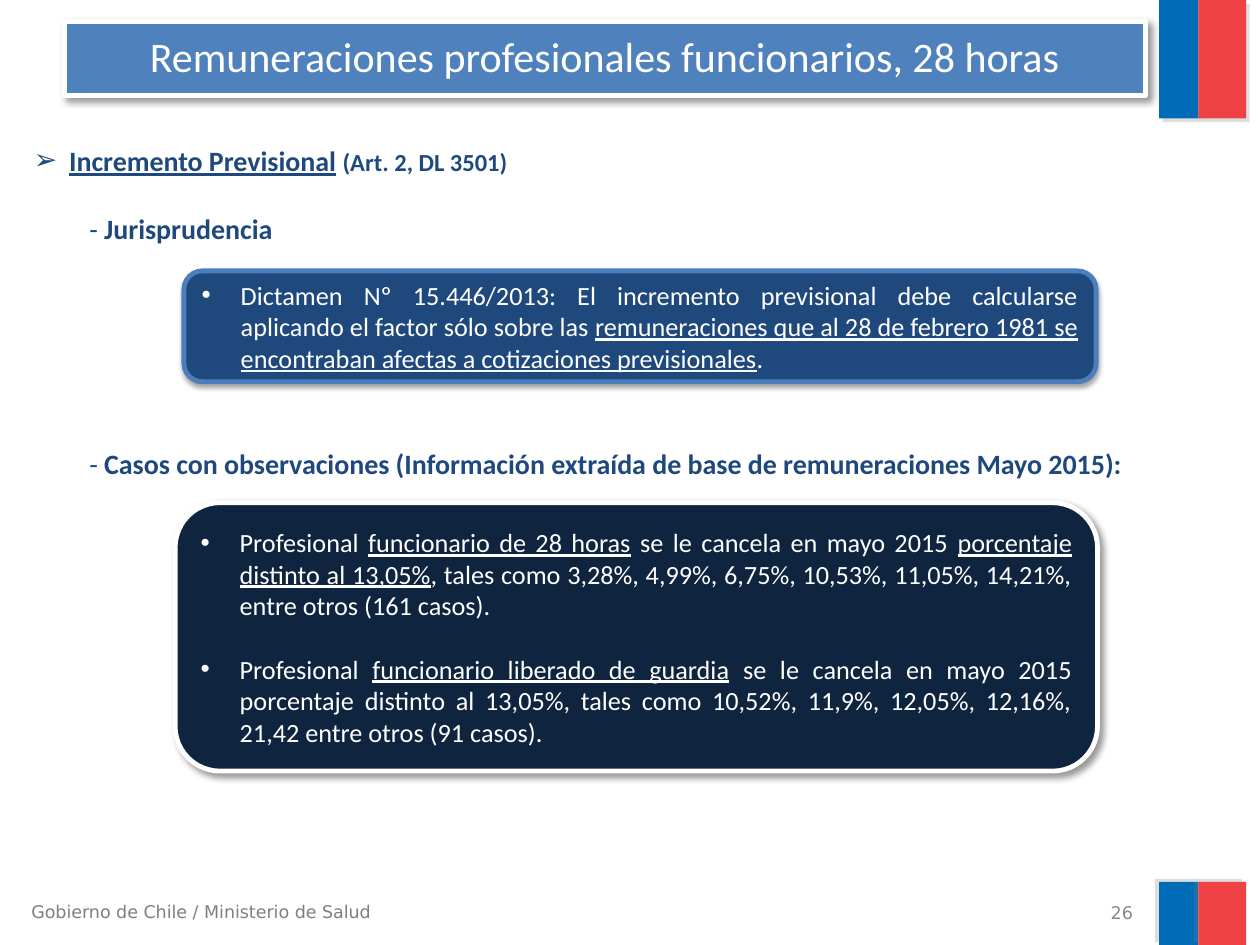
from lxml import etree
from pptx import Presentation
from pptx.dml.color import RGBColor
from pptx.enum.shapes import MSO_SHAPE
from pptx.enum.text import MSO_ANCHOR, MSO_AUTO_SIZE, PP_ALIGN
from pptx.oxml.ns import qn
from pptx.util import Inches, Pt

RECT, ROUND = MSO_SHAPE.RECTANGLE, MSO_SHAPE.ROUNDED_RECTANGLE
TOP, MIDDLE = MSO_ANCHOR.TOP, MSO_ANCHOR.MIDDLE
LEFT, CENTER, RIGHT, JUSTIFY = (PP_ALIGN.LEFT, PP_ALIGN.CENTER,
                                PP_ALIGN.RIGHT, PP_ALIGN.JUSTIFY)
FIXED = MSO_AUTO_SIZE.NONE

NAVY, WHITE = "1F497D", "FFFFFF"
HEAD = {"name": "Calibri", "size": Pt(16), "bold": True, "color": NAVY}
BODY = {"name": "Calibri", "size": Pt(15), "color": WHITE}
FOOT = {"name": "DejaVu Sans", "size": Pt(10), "color": "7F7F7F"}
LINE = {"underline": True}
SOFT = ("000000", 40, 4, 3, 45)


def rgb(code):
    return RGBColor.from_string(code)


def add_shadow(shape, color, alpha, blur, dist, angle):
    shape.shadow.inherit = False
    effects = shape._element.spPr.find(qn("a:effectLst"))
    outer = etree.SubElement(effects, qn("a:outerShdw"), {
        "blurRad": str(Pt(blur)), "dist": str(Pt(dist)),
        "dir": str(angle * 60000), "algn": "tl", "rotWithShape": "0"})
    tint = etree.SubElement(outer, qn("a:srgbClr"), val=color)
    etree.SubElement(tint, qn("a:alpha"), val=str(alpha * 1000))


def paint(shape, fill, line, width, shadow):
    shape.fill.solid()
    shape.fill.fore_color.rgb = rgb(fill)
    if line:
        shape.line.color.rgb = rgb(line)
        shape.line.width = Pt(width)
    else:
        shape.line.fill.background()
    add_shadow(shape, *shadow)


def add_run(para, text, style):
    run = para.add_run()
    run.text = text
    for key, value in style.items():
        if key == "color":
            run.font.color.rgb = rgb(value)
        else:
            setattr(run.font, key, value)


def write(frame, paras, base, anchor=TOP):
    """Each paragraph: runs as (text, changes), then its layout options."""
    frame.word_wrap = True
    frame.auto_size = FIXED
    frame.vertical_anchor = anchor
    for i, (runs, opts) in enumerate(paras):
        para = frame.paragraphs[0] if i == 0 else frame.add_paragraph()
        para.alignment = opts.get("align", LEFT)
        para.space_before = Pt(opts.get("before", 0))
        para.line_spacing = opts.get("spacing", 1.0)
        props = para._p.get_or_add_pPr()
        props.set("marL", str(Inches(opts.get("left", 0))))
        if "bullet" in opts:
            props.set("indent", str(-Inches(opts["left"])))
            etree.SubElement(props, qn("a:buFont"), typeface="Arial")
            etree.SubElement(props, qn("a:buChar"), char=opts["bullet"])
        for text, change in runs:
            add_run(para, text, base | change)


def add_text(slide, box, paras, base, anchor=TOP):
    frame = slide.shapes.add_textbox(*map(Inches, box)).text_frame
    write(frame, paras, base, anchor)


def add_flag(slide, box, angle):
    left, top, width, height = box
    split = 0.45 * width
    for x, w, color in ((left, split, "006CB7"),
                        (left + split, width - split, "EF4144")):
        bar = slide.shapes.add_shape(RECT, *map(Inches, (x, top, w, height)))
        paint(bar, color, None, 0, ("808080", 25, 0, 3, angle))


def add_title(slide, box, text):
    title = slide.shapes.title
    title.left, title.top, title.width, title.height = map(Inches, box)
    paint(title, "4F81BD", WHITE, 3, SOFT)
    write(title.text_frame,
          [([(text, {})], {"align": CENTER, "spacing": 0.9})],
          BODY | {"size": Pt(24)}, MIDDLE)


def add_heads(slide, box):
    plain = {"bold": False}
    sub = {"align": JUSTIFY, "left": 0.44}
    add_text(slide, box, [
        ([(" ", {}), ("Incremento Previsional", LINE), (" ", {}),
          ("(Art. 2, DL 3501)", {"size": Pt(14)})],
         {"bullet": "➢", "left": 0.23}),
        ([("- ", plain), ("Jurisprudencia", {})], sub | {"before": 19.5}),
        ([("- ", plain),
          ("Casos con observaciones (Información extraída de base de "
           "remuneraciones Mayo 2015):", {})], sub | {"before": 115}),
    ], HEAD)


def add_panel(slide, box, fill, line, shadow, items):
    panel = slide.shapes.add_shape(ROUND, *map(Inches, box))
    paint(panel, fill, line, 2.75, shadow)
    paras = [(runs, {"align": JUSTIFY, "bullet": "•", "left": 0.31,
                     "before": 18.3 if i else 0})
             for i, runs in enumerate(items)]
    write(panel.text_frame, paras, BODY, MIDDLE)


def add_footer(slide, box):
    left, top, width, height = box
    add_text(slide, (left, top, 3.02, height),
             [([("Gobierno de Chile / Ministerio de Salud", {})], {})], FOOT)
    add_text(slide, (left + width - 2.33, top + 0.01, 2.33, height),
             [([("26", {})], {"align": RIGHT})], FOOT | {"color": "898989"},
             MIDDLE)


def main():
    deck = Presentation()
    deck.slide_width, deck.slide_height = Inches(10), Inches(7.5)
    slide = deck.slides.add_slide(deck.slide_layouts[5])

    # Flag bars and footer
    add_flag(slide, (9.2, 0, 0.69, 0.94), 45)
    add_flag(slide, (9.2, 7, 0.69, 0.5), 215)
    add_footer(slide, (0.15, 7.1, 8.94, 0.27))

    # Title and section heads
    add_title(slide, (0.51, 0.17, 8.58, 0.59),
              "Remuneraciones profesionales funcionarios, 28 horas")
    add_heads(slide, (0.17, 1.09, 9.45, 2.85))

    # Observed cases
    add_panel(slide, (1.39, 3.99, 7.32, 2.13), "0F243E", WHITE, SOFT, [
        [("Profesional ", {}), ("funcionario de 28 horas", LINE),
         (" se le cancela en mayo 2015 ", {}),
         ("porcentaje distinto al 13,05%", LINE),
         (", tales como 3,28%, 4,99%, 6,75%, 10,53%, 11,05%, 14,21%, "
          "entre otros (161 casos).", {})],
        [("Profesional ", {}), ("funcionario liberado de guardia", LINE),
         (" se le cancela en mayo 2015 porcentaje distinto al 13,05%, "
          "tales como 10,52%, 11,9%, 12,05%, 12,16%, 21,42 entre otros "
          "(91 casos).", {})],
    ])

    # Ruling
    add_panel(slide, (1.46, 2.15, 7.24, 0.88), NAVY, "4B7EBC",
              ("000000", 35, 3.1, 1.8, 90), [
        [("Dictamen Nº 15.446/2013: El incremento previsional debe "
          "calcularse aplicando el factor sólo sobre las ", {}),
         ("remuneraciones que al 28 de febrero 1981 se encontraban "
          "afectas a cotizaciones previsionales", LINE), (".", {})],
    ])

    deck.save("out.pptx")


if __name__ == "__main__":
    main()
